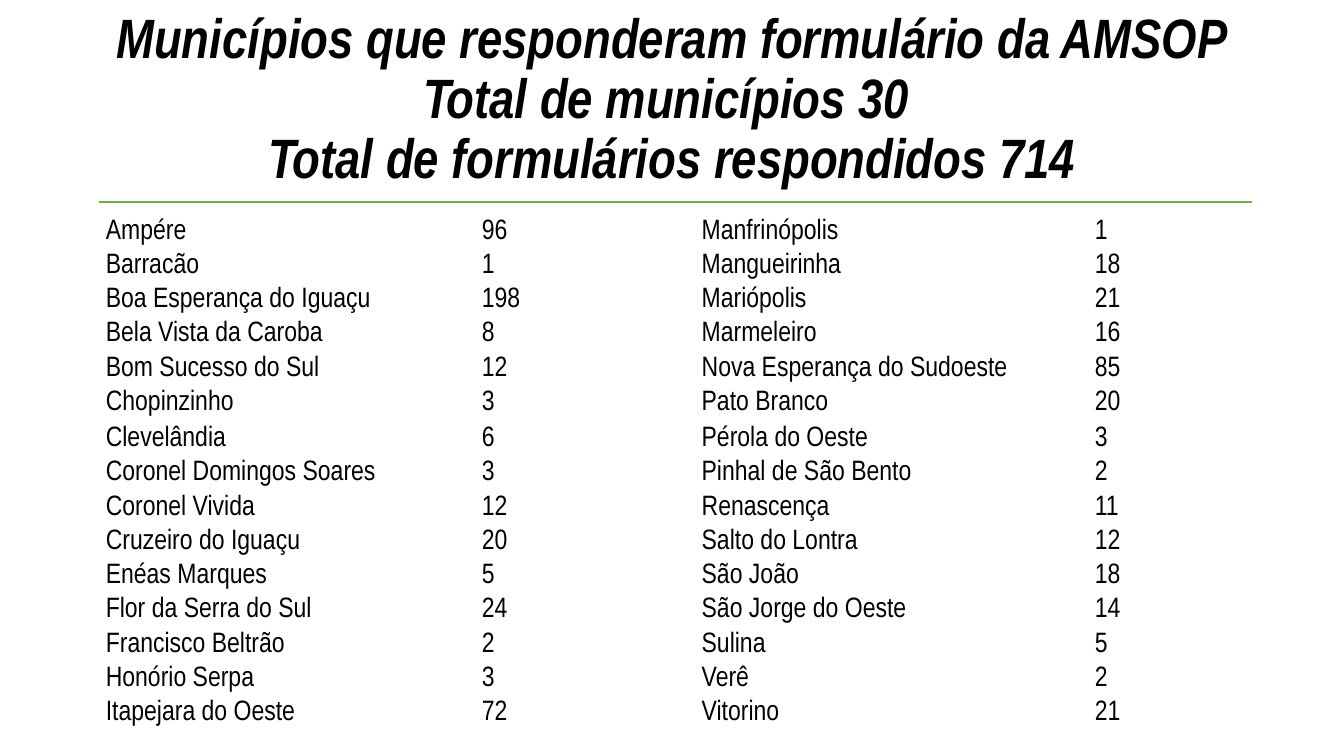
from pptx import Presentation
from pptx.dml.color import RGBColor
from pptx.enum.shapes import MSO_CONNECTOR
from pptx.enum.text import MSO_ANCHOR, MSO_AUTO_SIZE, PP_ALIGN
from pptx.oxml.ns import qn
from pptx.util import Inches, Pt
from lxml.etree import SubElement

BLACK = RGBColor(0x00, 0x00, 0x00)
GREEN = RGBColor(0x70, 0xAD, 0x47)
FONT = "Arial Narrow"

TITLE_LINES = [
    "Municípios que responderam formulário da AMSOP",
    "Total de municípios 30 ",
    "Total de formulários respondidos 714",
]
ANSWERS = [
    ("Ampére", 96), ("Barracão", 1), ("Boa Esperança do Iguaçu", 198),
    ("Bela Vista da Caroba", 8), ("Bom Sucesso do Sul", 12),
    ("Chopinzinho", 3), ("Clevelândia", 6), ("Coronel Domingos Soares", 3),
    ("Coronel Vivida", 12), ("Cruzeiro do Iguaçu", 20),
    ("Enéas Marques", 5), ("Flor da Serra do Sul", 24),
    ("Francisco Beltrão", 2), ("Honório Serpa", 3),
    ("Itapejara do Oeste", 72),
    ("Manfrinópolis", 1), ("Mangueirinha", 18), ("Mariópolis", 21),
    ("Marmeleiro", 16), ("Nova Esperança do Sudoeste", 85),
    ("Pato Branco", 20), ("Pérola do Oeste", 3),
    ("Pinhal de São Bento", 2), ("Renascença", 11),
    ("Salto do Lontra", 12), ("São João", 18), ("São Jorge do Oeste", 14),
    ("Sulina", 5), ("Verê", 2), ("Vitorino", 21),
]
ROWS = len(ANSWERS) // 2
COLUMN_WIDTHS = [3.73, 2.18, 3.9, 1.56]
ROW_HEIGHT = 0.34
TALL_ROW, TALL_HEIGHT = 5, 0.36
LEFT = Inches(0.98)


def add_run(paragraph, text, size, emphasis=False):
    run = paragraph.add_run()
    run.text = text
    run.font.name = FONT
    run.font.size = Pt(size)
    run.font.bold = run.font.italic = emphasis
    run.font.color.rgb = BLACK


presentation = Presentation()
presentation.slide_width = Inches(13.33)
presentation.slide_height = Inches(7.5)
slide = presentation.slides.add_slide(presentation.slide_layouts[5])

# Title: three lines in one paragraph
title = slide.shapes.title
title.left, title.top = Inches(0.92), Inches(0.27)
title.width, title.height = Inches(11.5), Inches(1.45)
frame = title.text_frame
frame.auto_size = MSO_AUTO_SIZE.NONE
frame.word_wrap = True
frame.vertical_anchor = MSO_ANCHOR.MIDDLE
paragraph = frame.paragraphs[0]
paragraph.alignment = PP_ALIGN.CENTER
paragraph.line_spacing = 0.9
for index, line in enumerate(TITLE_LINES):
    if index:
        paragraph.add_line_break()
    add_run(paragraph, line, 39.6, emphasis=True)

# Table: the list runs down the left half, then down the right half
table = slide.shapes.add_table(
    ROWS, len(COLUMN_WIDTHS), LEFT, Inches(2.15),
    Inches(sum(COLUMN_WIDTHS)), Inches(ROWS * ROW_HEIGHT)).table
table.first_row = table.horz_banding = False
for column, width in zip(table.columns, COLUMN_WIDTHS):
    column.width = Inches(width)
for index, row in enumerate(table.rows):
    row.height = Inches(TALL_HEIGHT if index == TALL_ROW else ROW_HEIGHT)

for index, answer in enumerate(ANSWERS):
    half, row = divmod(index, ROWS)
    for offset, value in enumerate(answer):
        cell = table.cell(row, 2 * half + offset)
        cell.fill.background()
        cell.margin_left = cell.margin_right = Inches(0.07)
        cell.margin_top = cell.margin_bottom = 0
        paragraph = cell.text_frame.paragraphs[0]
        paragraph.line_spacing = 1.07
        paragraph.space_after = Pt(8)
        add_run(paragraph, str(value), 20)

# Green rule under the title
rule = slide.shapes.add_connector(
    MSO_CONNECTOR.STRAIGHT, LEFT, Inches(2), Inches(12.42), Inches(2))
rule.line.color.rgb = GREEN
rule.line.width = Pt(1.5)
SubElement(rule._element.spPr, qn("a:effectLst"))

presentation.save("out.pptx")
